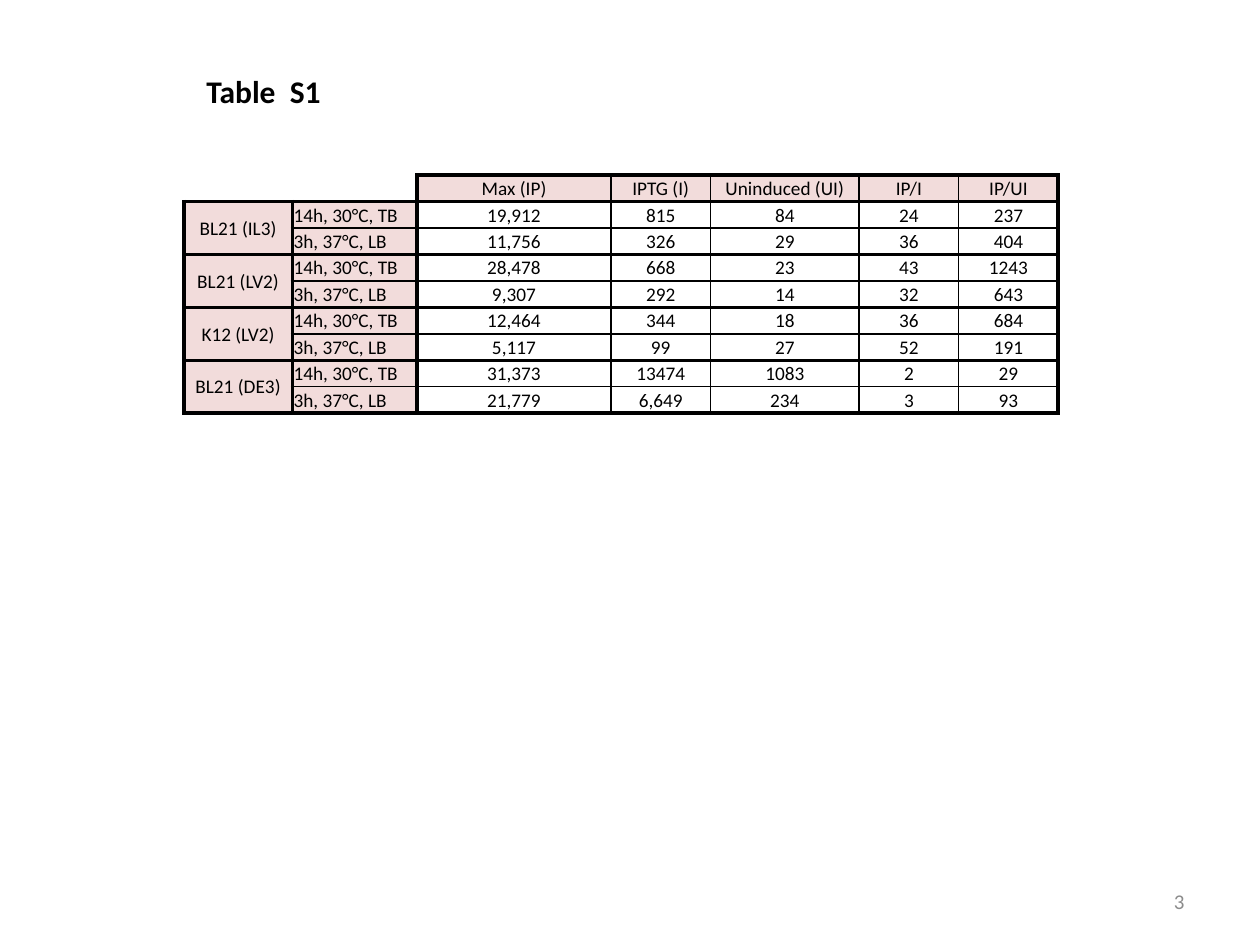
from lxml import etree
from pptx import Presentation
from pptx.dml.color import RGBColor
from pptx.enum.text import MSO_ANCHOR, MSO_AUTO_SIZE, PP_ALIGN
from pptx.oxml.ns import qn
from pptx.util import Inches, Pt

LEFT, CENTER, RIGHT = PP_ALIGN.LEFT, PP_ALIGN.CENTER, PP_ALIGN.RIGHT
TOP, MIDDLE = MSO_ANCHOR.TOP, MSO_ANCHOR.MIDDLE
FIT_SHAPE = MSO_AUTO_SIZE.SHAPE_TO_FIT_TEXT

COLORS = {"ink": "000000", "label": "F2DCDB", "number": "8C8C8C"}
FONT = "Calibri"
THICK, THIN = Pt(2.25), Pt(1)

COL_WIDTHS = [0.86, 0.99, 1.54, 0.79, 1.18, 0.79, 0.79]
ROW_HEIGHT = 0.21
THICK_EDGES = {0, 1, 2, len(COL_WIDTHS)}  # column edges with a heavy line

HEADERS = ["Max (IP)", "IPTG (I)", "Uninduced (UI)", "IP/I", "IP/UI"]
CONDITIONS = ["14h, 30°C, TB", "3h, 37°C, LB"]
STRAINS = {
    "BL21 (IL3)": [["19,912", "815", "84", "24", "237"],
                   ["11,756", "326", "29", "36", "404"]],
    "BL21 (LV2)": [["28,478", "668", "23", "43", "1243"],
                   ["9,307", "292", "14", "32", "643"]],
    "K12 (LV2)": [["12,464", "344", "18", "36", "684"],
                  ["5,117", "99", "27", "52", "191"]],
    "BL21 (DE3)": [["31,373", "13474", "1083", "2", "29"],
                   ["21,779", "6,649", "234", "3", "93"]],
}


def write(tf, text, size, color, align, bold=False):
    tf.text = text
    p = tf.paragraphs[0]
    p.alignment = align
    for r in p.runs:
        r.font.name, r.font.size, r.font.bold = FONT, Pt(size), bold
        r.font.color.rgb = RGBColor.from_string(COLORS[color])


def add_text(s, box, text, size, color, align, anchor=TOP, bold=False, wrap=True):
    tf = s.shapes.add_textbox(*map(Inches, box)).text_frame
    tf.word_wrap = wrap
    tf.vertical_anchor = anchor
    write(tf, text, size, color, align, bold)
    return tf


def set_borders(cell, widths):
    tc_pr = cell._tc.get_or_add_tcPr()
    for side, width in widths.items():
        ln = etree.SubElement(tc_pr, qn(f"a:ln{side}"), w=str(width))
        fill = etree.SubElement(ln, qn("a:solidFill"))
        etree.SubElement(fill, qn("a:srgbClr"), val=COLORS["ink"])


def border_widths(row, col):
    """Heavy lines frame the header, each strain's pair of rows and the labels."""
    if row == 0 and col < 2:  # open corner
        return {"R": THICK, "B": THICK} if col == 1 else {"B": THICK}
    return {
        "L": THICK if col in THICK_EDGES else THIN,
        "R": THICK if col + 1 in THICK_EDGES else THIN,
        "T": THICK if row == 0 or row % 2 or col == 0 else THIN,
        "B": THICK if row % 2 == 0 or col == 0 else THIN,
    }


def format_cell(cell, row, col, text):
    set_borders(cell, border_widths(row, col))
    is_corner = row == 0 and col < 2
    if not is_corner and (row == 0 or col < 2):
        cell.fill.solid()
        cell.fill.fore_color.rgb = RGBColor.from_string(COLORS["label"])
    else:
        cell.fill.background()
    cell.margin_left = cell.margin_right = cell.margin_top = Inches(0.01)
    cell.margin_bottom = 0
    cell.vertical_anchor = MIDDLE
    write(cell.text_frame, text, 11, "ink", LEFT if col == 1 and row else CENTER)
    if not text:  # keep empty cells from stretching their row
        cell.text_frame.paragraphs[0].font.size = Pt(11)


def table_rows():
    rows = [["", ""] + HEADERS]
    for strain, results in STRAINS.items():
        for i, (condition, values) in enumerate(zip(CONDITIONS, results)):
            rows.append(["" if i else strain, condition] + values)
    return rows


def add_results_table(s, left, top):
    rows = table_rows()
    table = s.shapes.add_table(
        len(rows), len(COL_WIDTHS), Inches(left), Inches(top),
        Inches(sum(COL_WIDTHS)), Inches(ROW_HEIGHT * len(rows))).table
    table.first_row = table.horz_banding = False
    for column, width in zip(table.columns, COL_WIDTHS):
        column.width = Inches(width)
    for r, texts in enumerate(rows):
        table.rows[r].height = Inches(ROW_HEIGHT)
        for c, text in enumerate(texts):
            format_cell(table.cell(r, c), r, c, text)

    # Merge the open corner and each strain label
    table.cell(0, 0).merge(table.cell(0, 1))
    for r in range(1, len(rows), 2):
        table.cell(r, 0).merge(table.cell(r + 1, 0))


def main():
    prs = Presentation()
    prs.slide_width, prs.slide_height = Inches(10), Inches(7.5)
    s = prs.slides.add_slide(prs.slide_layouts[6])

    # Title
    title = add_text(s, (1.54, 0.52, 1.14, 0.4), "Table  S1", 18, "ink", LEFT,
                     bold=True, wrap=False)
    title.auto_size = FIT_SHAPE

    # Results
    add_results_table(s, 1.46, 1.39)

    # Page number
    add_text(s, (7.17, 6.95, 2.33, 0.4), "3", 12, "number", RIGHT, anchor=MIDDLE)

    prs.save("out.pptx")


if __name__ == "__main__":
    main()
